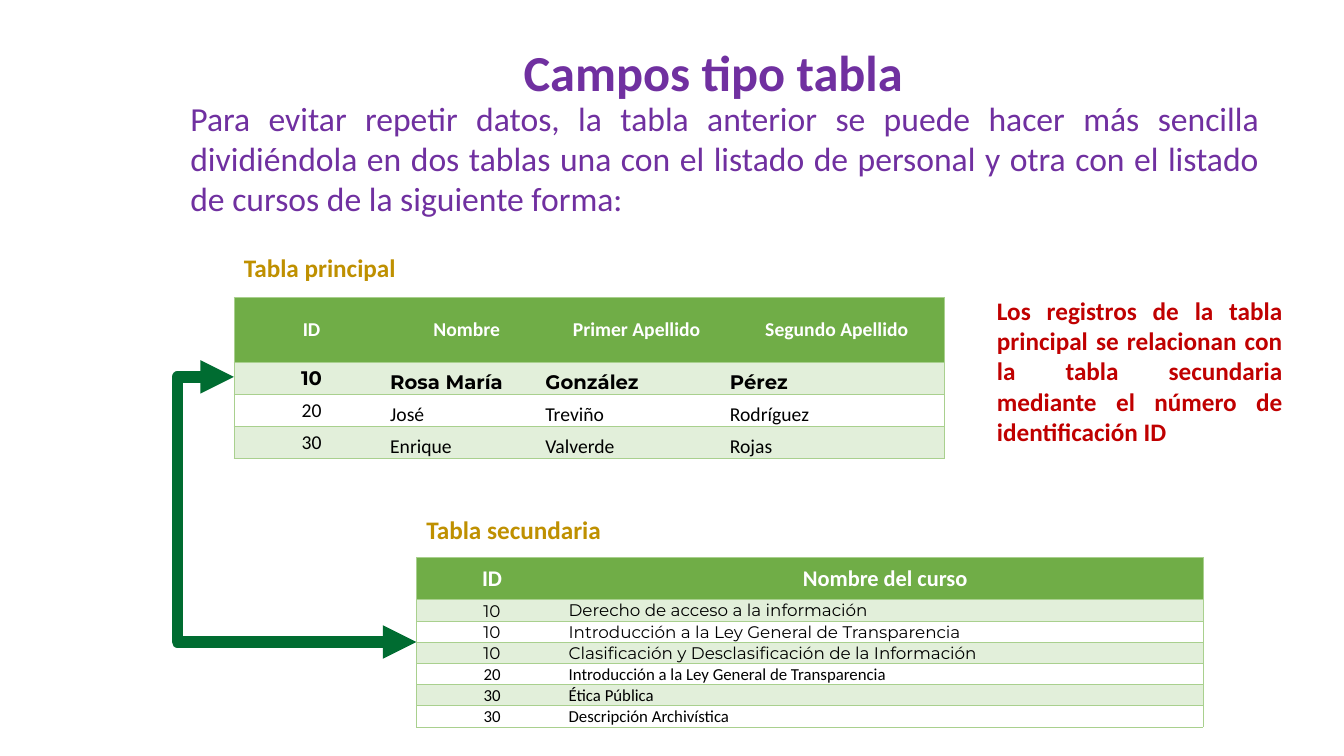
from dataclasses import dataclass

from lxml import etree
from pptx import Presentation
from pptx.dml.color import RGBColor
from pptx.enum import shapes, text
from pptx.oxml import ns
from pptx.util import Inches, Pt


@dataclass(frozen=True)
class Theme:
    font: str = "Calibri"
    accent_font: str = "Montserrat"
    purple: str = "7030A0"
    gold: str = "BF9000"
    red: str = "C00000"
    arrow: str = "006C31"
    header: str = "70AD47"
    band: str = "E2EFDA"
    border: str = "A9D08E"
    white: str = "FFFFFF"
    black: str = "000000"
    title_size: int = 36
    intro_size: int = 24
    label_size: int = 18
    secondary_header_size: int = 16
    main_size: int = 14
    course_size: int = 12
    border_width: float = 0.5
    arrow_width: int = 8


THEME = Theme()
ALIGN = text.PP_ALIGN
ANCHOR = text.MSO_ANCHOR


def write(frame, content, size, color, align, bold=False, font=THEME.font):
    frame.text = content
    paragraph = frame.paragraphs[0]
    paragraph.alignment = align
    for run in paragraph.runs:
        run.font.name = font
        run.font.size = Pt(size)
        run.font.bold = bold
        run.font.color.rgb = RGBColor.from_string(color)
    return paragraph


def add_title(slide, content, box):
    title = slide.shapes.title
    title.left, title.top, title.width, title.height = map(Inches, box)
    frame = title.text_frame
    frame.word_wrap = True
    frame.auto_size = text.MSO_AUTO_SIZE.NONE
    frame.vertical_anchor = ANCHOR.MIDDLE
    paragraph = write(frame, content, THEME.title_size, THEME.purple, ALIGN.CENTER, True)
    paragraph.line_spacing = 0.9


def add_text(slide, content, box, size, color, bold=True):
    frame = slide.shapes.add_textbox(*map(Inches, box)).text_frame
    frame.word_wrap = True
    frame.auto_size = text.MSO_AUTO_SIZE.SHAPE_TO_FIT_TEXT
    write(frame, content, size, color, ALIGN.JUSTIFY, bold)


def set_borders(cell, visible_sides):
    properties = cell._tc.get_or_add_tcPr()
    for side in "LRTB":
        line = etree.SubElement(properties, ns.qn(f"a:ln{side}"))
        if side in visible_sides:
            line.set("w", str(Pt(THEME.border_width)))
            fill = etree.SubElement(line, ns.qn("a:solidFill"))
            etree.SubElement(fill, ns.qn("a:srgbClr"), val=THEME.border)
        else:
            line.set("w", "0")
            etree.SubElement(line, ns.qn("a:noFill"))


def add_records(slide, left, top, widths, heights, rows, header_size, body_size,
                accent_rows, accent_bold):
    box = map(Inches, (left, top, sum(widths), sum(heights)))
    table = slide.shapes.add_table(len(rows), len(widths), *box).table
    table.horz_banding = False
    table.first_row = False
    for column, width in zip(table.columns, widths):
        column.width = Inches(width)
    for row, height in zip(table.rows, heights):
        row.height = Inches(height)
    last = len(widths) - 1
    for r, values in enumerate(rows):
        header = r == 0
        accent = r in accent_rows
        for c, value in enumerate(values):
            cell = table.cell(r, c)
            centered = header or c == 0
            cell.margin_left = cell.margin_top = cell.margin_right = Inches(0.01)
            cell.margin_bottom = 0
            cell.vertical_anchor = ANCHOR.MIDDLE if centered else ANCHOR.BOTTOM
            set_borders(cell, "TB" + "L" * (c == 0) + "R" * (c == last))
            if header or r % 2:
                cell.fill.solid()
                cell.fill.fore_color.rgb = RGBColor.from_string(
                    THEME.header if header else THEME.band)
            else:
                cell.fill.background()
            write(cell.text_frame, value,
                  header_size if header else body_size,
                  THEME.white if header else THEME.black,
                  ALIGN.CENTER if centered else ALIGN.LEFT,
                  header or (accent and accent_bold),
                  THEME.accent_font if accent else THEME.font)


def add_relation(slide, start, end, bend):
    relation = slide.shapes.add_connector(
        shapes.MSO_CONNECTOR.ELBOW, *map(Inches, start + end))
    relation.line.color.rgb = RGBColor.from_string(THEME.arrow)
    relation.line.width = Pt(THEME.arrow_width)
    properties = relation._element.spPr
    adjustments = properties.find(ns.qn("a:prstGeom")).get_or_add_avLst()
    etree.SubElement(adjustments, ns.qn("a:gd"), name="adj1",
                     fmla=f"val {round(bend * 100000)}")
    line = relation.line._get_or_add_ln()
    for tip in ("headEnd", "tailEnd"):
        etree.SubElement(line, ns.qn(f"a:{tip}"), type="triangle")
    etree.SubElement(properties, ns.qn("a:effectLst"))


def main():
    presentation = Presentation()
    presentation.slide_width = Inches(13.33)
    presentation.slide_height = Inches(7.5)
    slide = presentation.slides.add_slide(presentation.slide_layouts[5])

    add_title(slide, "Campos tipo tabla", (3.43, 0.17, 7.29, 1.15))
    add_text(slide,
             "Para evitar repetir datos, la tabla anterior se puede hacer más sencilla "
             "dividiéndola en dos tablas una con el listado de personal y otra con el "
             "listado de cursos de la siguiente forma:",
             (1.79, 0.92, 10.8, 1.31), THEME.intro_size, THEME.purple, False)

    people = [
        ("ID", "Nombre", "Primer Apellido", "Segundo Apellido"),
        ("10", "Rosa María", "González", "Pérez"),
        ("20", "José", "Treviño", "Rodríguez"),
        ("30", "Enrique", "Valverde", "Rojas"),
    ]
    add_records(slide, 2.32, 2.95, [1.54, 1.54, 1.83, 2.14], [0.64] + [0.32] * 3,
                people, THEME.main_size, THEME.main_size, {1}, True)
    add_text(slide, "Tabla principal", (2.32, 2.45, 2.44, 0.44),
             THEME.label_size, THEME.gold)

    courses = [
        ("ID", "Nombre del curso"),
        ("10", "Derecho de acceso a la información"),
        ("10", "Introducción a la Ley General de Transparencia"),
        ("10", "Clasificación y Desclasificación de la Información"),
        ("20", "Introducción a la Ley General de Transparencia"),
        ("30", "Ética Pública"),
        ("30", "Descripción Archivística"),
    ]
    add_records(slide, 4.13, 5.53, [1.5, 6.3], [0.42] + [0.21] * 6,
                courses, THEME.secondary_header_size, THEME.course_size,
                {1, 2, 3}, False)
    add_text(slide, "Tabla secundaria", (4.13, 5.05, 2.87, 0.4),
             THEME.label_size, THEME.gold)

    add_relation(slide, (4.13, 6.37), (2.32, 3.74), 1.31)
    add_text(slide,
             "Los registros de la tabla principal se relacionan con la tabla secundaria "
             "mediante el número de identificación ID",
             (9.79, 2.88, 3.03, 1.62), THEME.label_size, THEME.red)

    presentation.save("out.pptx")


if __name__ == "__main__":
    main()
